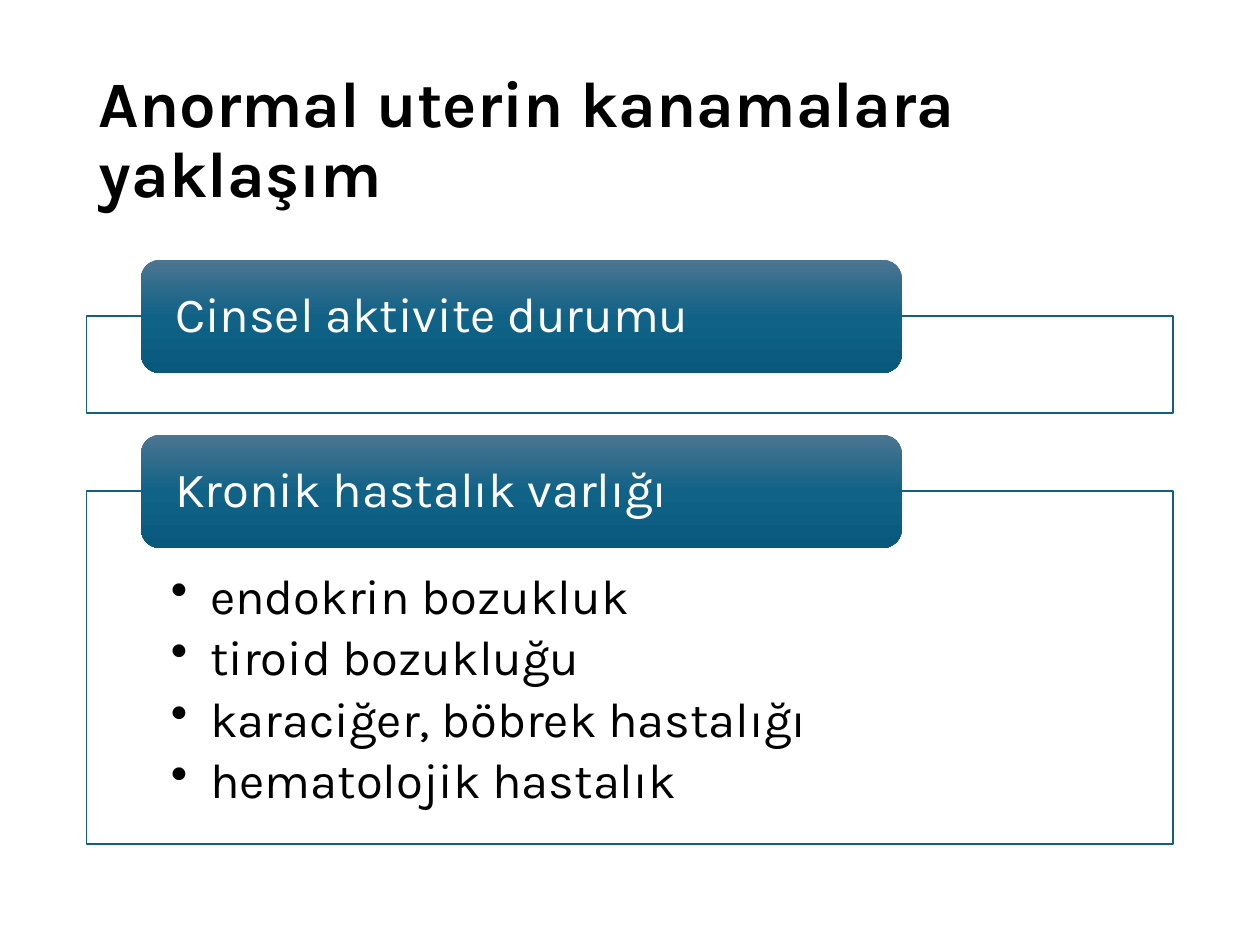
from copy import deepcopy

from lxml import etree
from pptx import Presentation
from pptx import util as u
from pptx.dml.color import RGBColor
from pptx.enum import shapes, text
from pptx.oxml.ns import qn

FONT = "Karla"
BLACK, WHITE, OUTLINE = "000000", "FFFFFF", "156082"
TAB_STOPS = [(0, "4C7591"), (0.5, "106287"), (1, "09597D")]
TAB_HEIGHT = 64.8
PANEL_GAP = 12.2
PANELS = [
    ("Cinsel aktivite durumu", [], 87.8),
    (
        "Kronik hastalık varlığı",
        [
            "endokrin bozukluk",
            "tiroid bozukluğu",
            "karaciğer, böbrek hastalığı",
            "hematolojik hastalık",
        ],
        234,
    ),
]


def rgb(value):
    """Turn a hex string into a colour."""
    return RGBColor.from_string(value)


def points(box):
    """Turn a box of numbers into lengths."""
    return [u.Pt(value) for value in box]


def apply(target, formats):
    """Set each format value on the target."""
    for key, value in formats.items():
        setattr(target, key, value)


def write(frame, lines, size, color, insets, anchor, bold=False, after=0):
    """Fill a text frame with one paragraph per line."""
    left, top, right, bottom = points(insets)
    apply(frame, {
        "word_wrap": True, "vertical_anchor": anchor,
        "margin_left": left, "margin_top": top,
        "margin_right": right, "margin_bottom": bottom,
    })
    for index, line in enumerate(lines):
        paragraph = frame.add_paragraph() if index else frame.paragraphs[0]
        apply(paragraph, {
            "alignment": text.PP_ALIGN.LEFT, "line_spacing": 0.9,
            "space_before": u.Pt(0), "space_after": u.Pt(after),
        })
        run = paragraph.add_run()
        run.text = line
        apply(run.font, {"name": FONT, "size": u.Pt(size), "bold": bold})
        run.font.color.rgb = rgb(color)


def add_bullets(frame, indent):
    """Give every paragraph a hanging round bullet."""
    for paragraph in frame.paragraphs:
        properties = paragraph._p.get_or_add_pPr()
        properties.set("marL", str(u.Pt(indent)))
        properties.set("indent", str(-u.Pt(indent)))
        etree.SubElement(properties, qn("a:buChar"), char="•")


def fill_gradient(shape, stops):
    """Fill a shape from top to bottom through the stops."""
    shape.fill.gradient()
    shape.fill.gradient_angle = 270
    stop_list = shape.fill._xPr.find(qn("a:gradFill")).find(qn("a:gsLst"))
    stop_list.insert(1, deepcopy(stop_list[0]))
    for stop, (position, color) in zip(shape.fill.gradient_stops, stops):
        stop.position = position
        stop.color.rgb = rgb(color)


def add_title(slide, box):
    """Place the slide title."""
    title = slide.shapes.add_textbox(*points(box))
    write(title.text_frame, ["Anormal uterin kanamalara yaklaşım"], 37, BLACK,
          (7.2, 3.6, 7.2, 3.6), text.MSO_ANCHOR.MIDDLE, bold=True)


def add_panel(slide, box, heading, items):
    """Place an outlined panel with a heading tab across its top edge."""
    left, top, width, height = box
    overlap = TAB_HEIGHT / 2
    body = slide.shapes.add_shape(
        shapes.MSO_SHAPE.RECTANGLE,
        *points((left, top + overlap, width, height - overlap)))
    body.shadow.inherit = False
    body.fill.solid()
    body.fill.fore_color.rgb = rgb(WHITE)
    body.line.color.rgb = rgb(OUTLINE)
    body.line.width = u.Pt(1)
    if items:
        write(body.text_frame, items, 28, BLACK, (48.2, 46, 48.2, 16),
              text.MSO_ANCHOR.TOP, after=4.9)
        add_bullets(body.text_frame, 22.5)

    tab = slide.shapes.add_shape(
        shapes.MSO_SHAPE.ROUNDED_RECTANGLE,
        *points((left + width * 0.05, top, width * 0.7, TAB_HEIGHT)))
    tab.shadow.inherit = False
    fill_gradient(tab, TAB_STOPS)
    tab.line.fill.background()
    write(tab.text_frame, [heading], 28, WHITE, (16.4, 0, 16.4, 0),
          text.MSO_ANCHOR.MIDDLE)


def main():
    """Build the slide and save it."""
    deck = Presentation()
    deck.slide_width, deck.slide_height = u.Pt(720), u.Pt(540)
    slide = deck.slides.add_slide(deck.slide_layouts[6])
    add_title(slide, (49.5, 28.8, 621, 104.4))
    top = 148.4
    for heading, items, height in PANELS:
        add_panel(slide, (49.5, top, 621, height), heading, items)
        top += height + PANEL_GAP
    deck.save("out.pptx")


if __name__ == "__main__":
    main()
